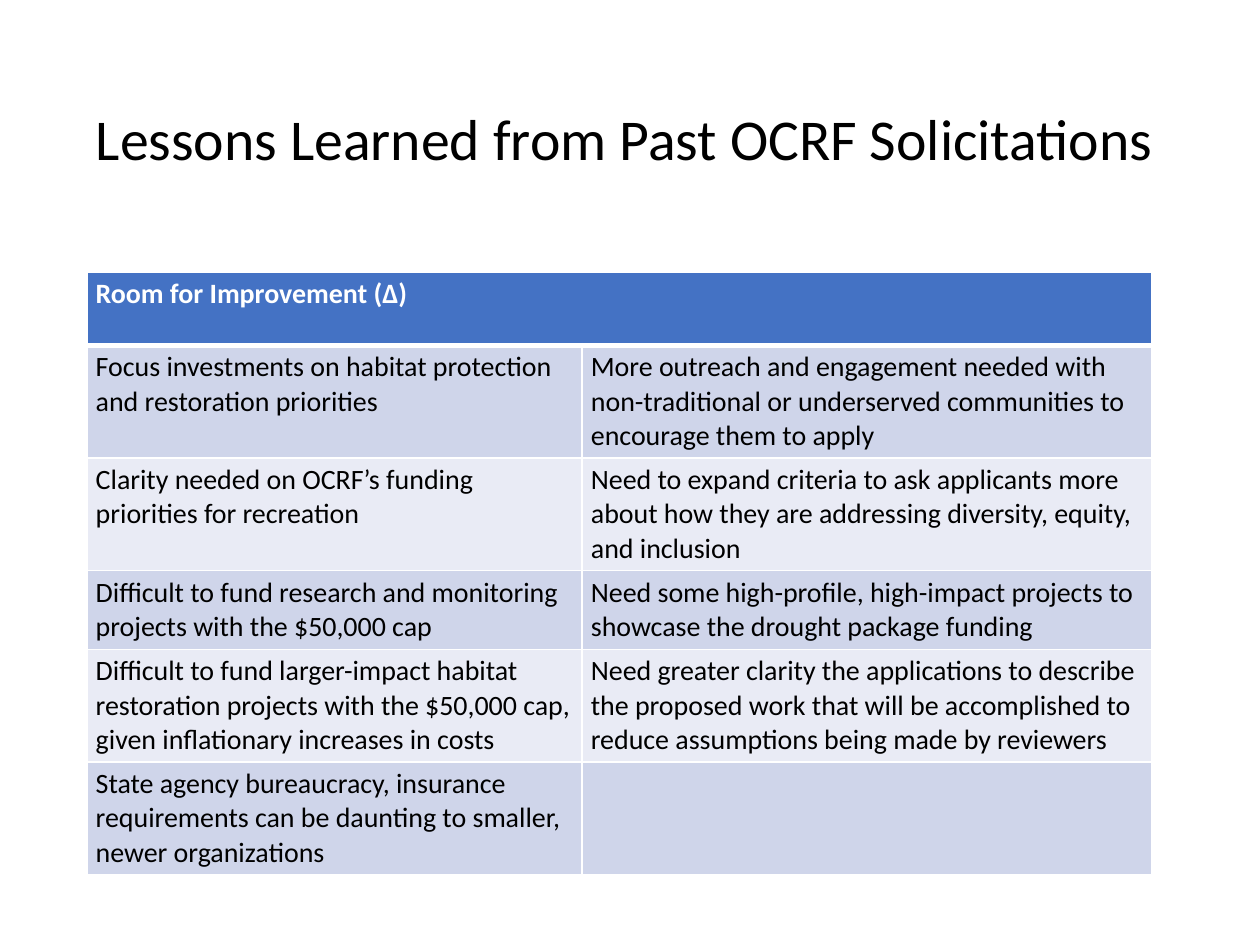
from lxml import etree
from pptx import Presentation
from pptx.dml.color import RGBColor
from pptx.enum.text import MSO_ANCHOR, MSO_AUTO_SIZE, PP_ALIGN
from pptx.oxml.ns import qn
from pptx.util import Inches, Pt

LEFT = PP_ALIGN.LEFT
MIDDLE = MSO_ANCHOR.MIDDLE
NO_AUTOFIT = MSO_AUTO_SIZE.NONE

BLACK = RGBColor(0x00, 0x00, 0x00)
WHITE = RGBColor(0xFF, 0xFF, 0xFF)
HEADER_BLUE = RGBColor(0x44, 0x72, 0xC4)
BAND_DARK = RGBColor(0xCF, 0xD5, 0xEA)
BAND_LIGHT = RGBColor(0xE9, 0xEB, 0xF5)

HEADING = "Room for Improvement (Δ)"
LESSONS = [
    ("Focus investments on habitat protection and restoration priorities",
     "More outreach and engagement needed with non-traditional or underserved "
     "communities to encourage them to apply"),
    ("Clarity needed on OCRF’s funding priorities for recreation",
     "Need to expand criteria to ask applicants more about how they are "
     "addressing diversity, equity, and inclusion"),
    ("Difficult to fund research and monitoring projects with the $50,000 cap",
     "Need some high-profile, high-impact projects to showcase the drought "
     "package funding"),
    ("Difficult to fund larger-impact habitat restoration projects with the "
     "$50,000 cap, given inflationary increases in costs",
     "Need greater clarity the applications to describe the proposed work that "
     "will be accomplished to reduce assumptions being made by reviewers"),
    ("State agency bureaucracy, insurance requirements can be daunting to "
     "smaller, newer organizations", ""),
]


def add_run(paragraph, text, size, color, bold=False):
    run = paragraph.add_run()
    run.text = text
    run.font.name = "Calibri"
    run.font.size = Pt(size)
    run.font.color.rgb = color
    run.font.bold = bold


def style_cell(cell, fill, bottom_width=1):
    """Set margins, white borders and fill; borders must precede the fill."""
    cell.margin_left = cell.margin_right = Inches(0.07)
    cell.margin_top = cell.margin_bottom = Inches(0.04)
    properties = cell._tc.get_or_add_tcPr()
    for side, width in (("L", 1), ("R", 1), ("T", 1), ("B", bottom_width)):
        border = etree.SubElement(properties, qn(f"a:ln{side}"), w=str(Pt(width)))
        solid = etree.SubElement(border, qn("a:solidFill"))
        etree.SubElement(solid, qn("a:srgbClr"), val=str(WHITE))
    cell.fill.solid()
    cell.fill.fore_color.rgb = fill


prs = Presentation()
prs.slide_width, prs.slide_height = Inches(10), Inches(7.5)
slide = prs.slides.add_slide(prs.slide_layouts[5])

title = slide.shapes.title
title.left, title.top = Inches(0.69), Inches(0.4)
title.width, title.height = Inches(8.62), Inches(1.45)
title_frame = title.text_frame
title_frame.auto_size = NO_AUTOFIT
title_frame.word_wrap = True
title_frame.vertical_anchor = MIDDLE
title_frame.margin_left = title_frame.margin_right = Inches(0.07)
headline = title_frame.paragraphs[0]
headline.alignment = LEFT
headline.line_spacing = 0.9
add_run(headline, "Lessons Learned from Past OCRF Solicitations", 33, BLACK)

row_count = len(LESSONS) + 1
row_height = Inches(0.58)
lessons_table = slide.shapes.add_table(
    row_count, 2, Inches(0.69), Inches(2.16), Inches(8.45), row_height * row_count
).table
lessons_table.columns[0].width = Inches(3.93)
lessons_table.columns[1].width = Inches(4.52)
for row in lessons_table.rows:
    row.height = row_height

heading_cell = lessons_table.cell(0, 0)
heading_cell.merge(lessons_table.cell(0, 1))
for column in range(2):
    style_cell(lessons_table.cell(0, column), HEADER_BLUE, bottom_width=3)
add_run(heading_cell.text_frame.paragraphs[0], HEADING, 16, WHITE, bold=True)

for row_number, lesson_pair in enumerate(LESSONS, start=1):
    band = BAND_DARK if row_number % 2 else BAND_LIGHT
    for column, lesson in enumerate(lesson_pair):
        cell = lessons_table.cell(row_number, column)
        style_cell(cell, band, bottom_width=1)
        if lesson:
            add_run(cell.text_frame.paragraphs[0], lesson, 16, BLACK)

# The rule under the heading is shared with the first lesson row.
for column in range(2):
    first_lesson = lessons_table.cell(1, column)._tc.tcPr
    first_lesson.find(qn("a:lnT")).set("w", str(Pt(3)))

prs.save("out.pptx")
